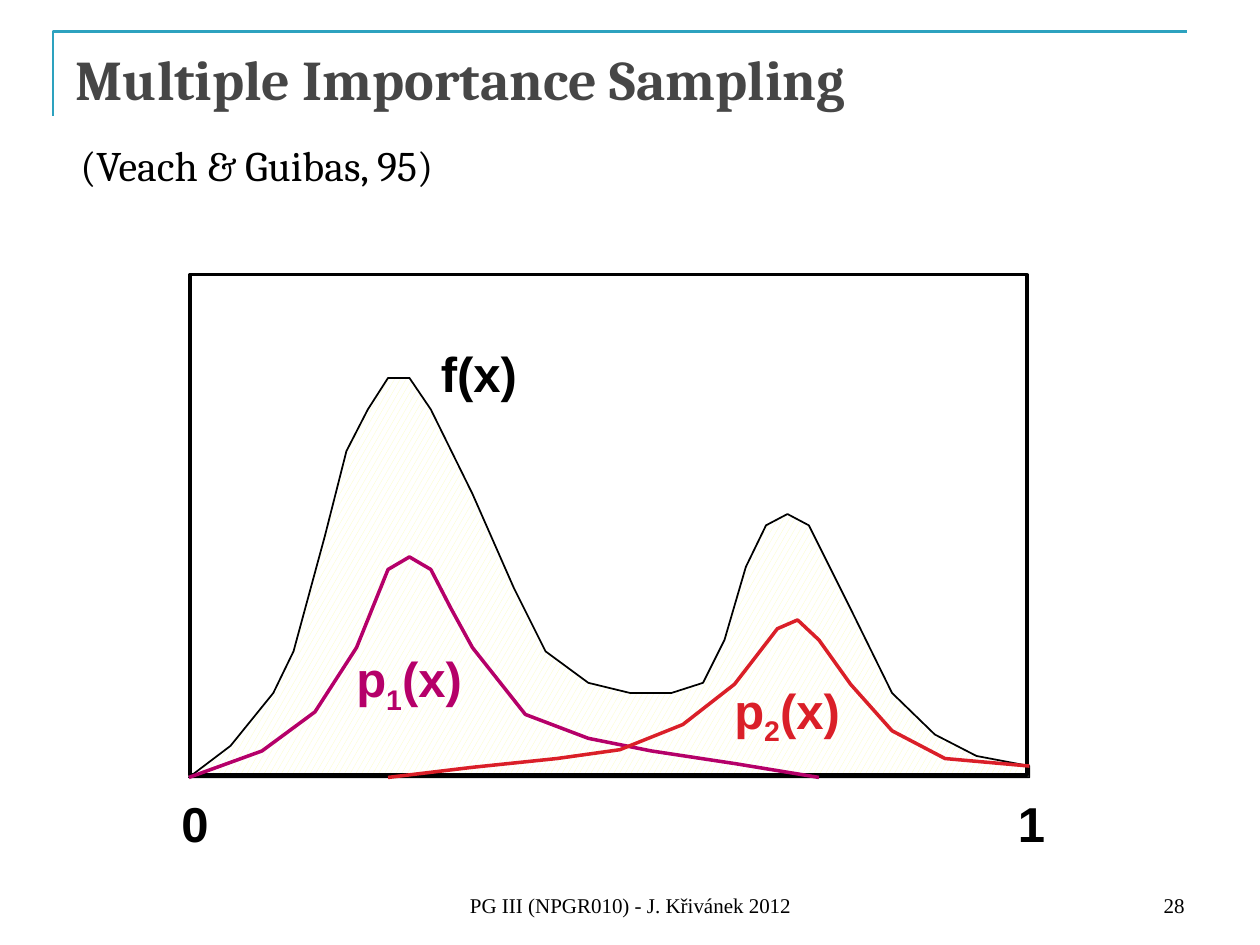
"""Build the Multiple Importance Sampling slide."""
from pptx import Presentation
from pptx import util as u
from pptx.dml.color import RGBColor
from pptx.enum import dml, shapes, text

THEME = {
    "frame": "2DA2BF", "title": "464646", "ink": "000000", "p1": "B50069", "p2": "DA1F28",
    "hatch": "FCFEB9", "paper": "FFFFFF",
    "serif": "Cambria", "sans": "Arial", "small": "Times New Roman",
    "title_pt": 32, "cite_pt": 24, "label_pt": 28, "foot_pt": 12,
}
TITLE = "Multiple Importance Sampling"
CITATION = "(Veach & Guibas, 95)"
CORNER = [(0.42, 0.92), (0.42, 0.25), (9.42, 0.25)]
F_CURVE = [
    (1.83, 5.92), (2.17, 5.5), (2.33, 5.17), (2.58, 4.25), (2.75, 3.58), (2.92, 3.25),
    (3.08, 3), (3.25, 3), (3.42, 3.25), (3.75, 3.92), (4.08, 4.67), (4.33, 5.17),
    (4.67, 5.42), (5, 5.5), (5.33, 5.5), (5.58, 5.42), (5.75, 5.08), (5.92, 4.5),
    (6.08, 4.17), (6.25, 4.08), (6.42, 4.17), (6.75, 4.83), (7.08, 5.5), (7.42, 5.83),
    (7.75, 6), (8.17, 6.08), (8.17, 6.17), (1.5, 6.17), (1.83, 5.92),
]
P1_CURVE = [
    (1.5, 6.17), (2.08, 5.96), (2.5, 5.65), (2.83, 5.14), (3.08, 4.52), (3.25, 4.42),
    (3.42, 4.52), (3.58, 4.83), (3.75, 5.14), (4.17, 5.67), (4.67, 5.86), (5.17, 5.96),
    (5.83, 6.06), (6.5, 6.17),
]
P2_CURVE = [
    (8.17, 6.08), (7.5, 6.02), (7.08, 5.8), (6.75, 5.43), (6.5, 5.08), (6.33, 4.92),
    (6.17, 4.99), (6, 5.21), (5.83, 5.43), (5.42, 5.75), (4.92, 5.95), (4.42, 6.02),
    (3.75, 6.09), (3.08, 6.17),
]
AXES_BOX = (1.51, 2.18, 6.64, 3.97)
LABELS = [
    ((3.4, 2.68, 0.84, 0.56), [("f(x)", 0)], "ink"),
    ((1.34, 6.25, 0.41, 0.56), [("0", 0)], "ink"),
    ((7.98, 6.25, 0.41, 0.56), [("1", 0)], "ink"),
    ((2.73, 5.1, 1.06, 0.56), [("p", 0), ("1", -25), ("(x)", 0)], "p1"),
    ((5.73, 5.35, 1.06, 0.56), [("p", 0), ("2", -25), ("(x)", 0)], "p2"),
]
FOOTERS = [
    ((3.42, 6.83, 3.17, 0.5), "PG III (NPGR010) - J. Křivánek 2012", text.PP_ALIGN.CENTER),
    ((7.17, 6.83, 2.33, 0.5), "28", text.PP_ALIGN.RIGHT),
]


def color(key):
    return RGBColor.from_string(THEME[key])


def inches(values):
    return [u.Inches(v) for v in values]


def outline(sp, key, width):
    sp.shadow.inherit = False
    sp.fill.background()
    sp.line.color.rgb = color(key)
    sp.line.width = u.Pt(width)
    return sp


def add_curve(s, points, key, width):
    start, *rest = [inches(point) for point in points]
    closed = points[0] == points[-1]
    builder = s.shapes.build_freeform(*start, scale=1.0)
    builder.add_line_segments(rest, close=closed)
    return outline(builder.convert_to_shape(), key, width)


def write(tf, runs, face, size, key, bold=False, align=text.PP_ALIGN.LEFT):
    p = tf.paragraphs[0]
    p.alignment = align
    for words, baseline in runs:
        r = p.add_run()
        r.text = words
        r.font.name, r.font.size, r.font.bold = THEME[face], u.Pt(THEME[size]), bold
        r.font.color.rgb = color(key)
        if baseline:
            r._r.get_or_add_rPr().set("baseline", str(baseline * 1000))


def add_text(s, box, runs, face, size, key, wrap=False, anchor=text.MSO_ANCHOR.TOP, **style):
    tf = s.shapes.add_textbox(*inches(box)).text_frame
    tf.word_wrap = wrap
    tf.auto_size = text.MSO_AUTO_SIZE.NONE if wrap else text.MSO_AUTO_SIZE.SHAPE_TO_FIT_TEXT
    tf.vertical_anchor = anchor
    write(tf, runs, face, size, key, **style)


def main():
    prs = Presentation()
    prs.slide_width, prs.slide_height = inches((10, 7.5))
    s = prs.slides.add_slide(prs.slide_layouts[5])

    title = s.shapes.title
    title.left, title.top, title.width, title.height = inches((0.5, 0.3, 9, 1.25))
    title.text_frame.vertical_anchor = text.MSO_ANCHOR.TOP
    title.text_frame.auto_size = text.MSO_AUTO_SIZE.NONE
    write(title.text_frame, [(TITLE, 0)], "serif", "title_pt", "title", bold=True)

    add_curve(s, CORNER, "frame", 1.5)
    area = add_curve(s, F_CURVE, "ink", 1)
    area.fill.patterned()
    area.fill.pattern = dml.MSO_PATTERN.LARGE_CONFETTI
    area.fill.fore_color.rgb = color("hatch")
    area.fill.back_color.rgb = color("paper")
    outline(s.shapes.add_shape(shapes.MSO_SHAPE.RECTANGLE, *inches(AXES_BOX)), "ink", 2)
    add_curve(s, P1_CURVE, "p1", 2)
    add_curve(s, P2_CURVE, "p2", 2)

    for box, runs, key in LABELS:
        add_text(s, box, runs, "sans", "label_pt", key, bold=True)
    for box, words, align in FOOTERS:
        add_text(s, box, [(words, 0)], "small", "foot_pt", "ink", wrap=True,
                 anchor=text.MSO_ANCHOR.BOTTOM, align=align)
    add_text(s, (0.54, 1.06, 3.34, 0.5), [(CITATION, 0)], "serif", "cite_pt", "ink")
    prs.save("out.pptx")


if __name__ == "__main__":
    main()
